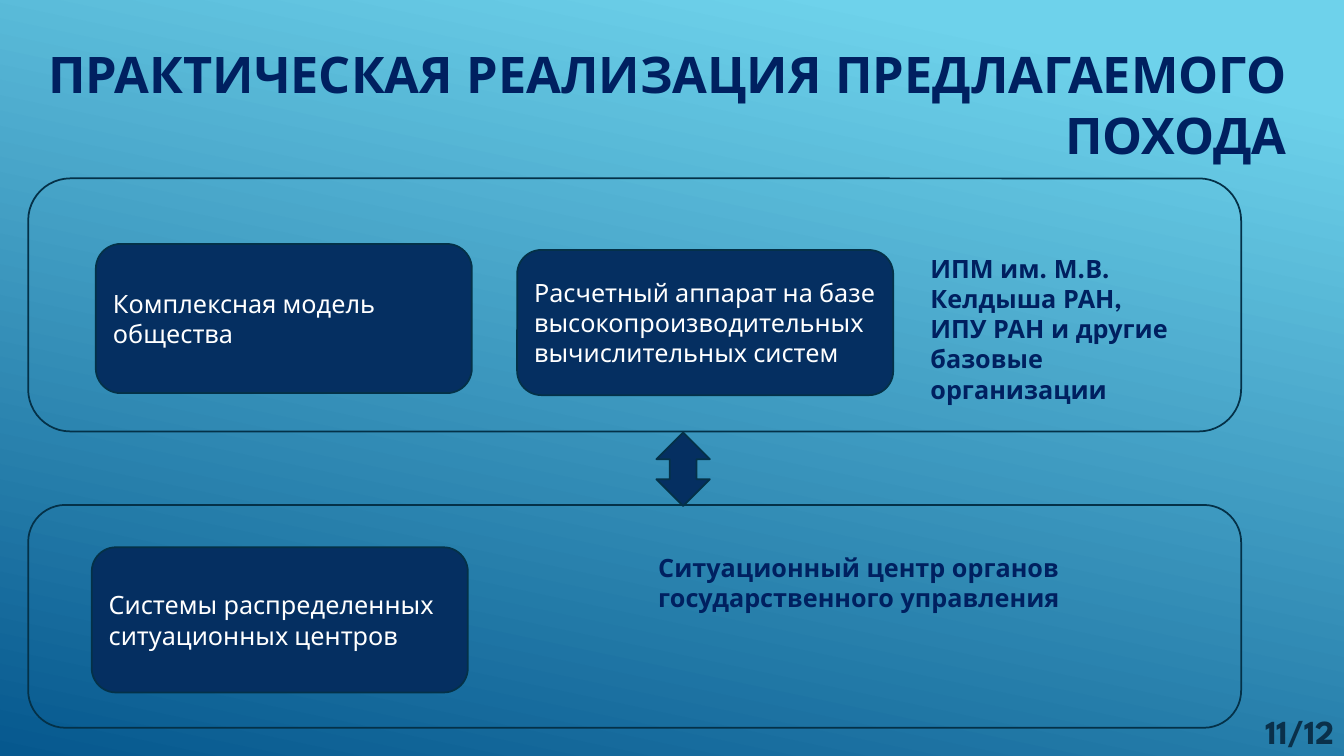
from typing import NamedTuple

from pptx import Presentation
from pptx.dml.color import RGBColor
from pptx.enum.shapes import MSO_SHAPE
from pptx.enum.text import MSO_ANCHOR, PP_ALIGN
from pptx.util import Inches, Pt

ROUNDED, TWO_WAY_ARROW = MSO_SHAPE.ROUNDED_RECTANGLE, MSO_SHAPE.UP_DOWN_ARROW
TOP, MIDDLE, BOTTOM = MSO_ANCHOR.TOP, MSO_ANCHOR.MIDDLE, MSO_ANCHOR.BOTTOM
LEFT, RIGHT = PP_ALIGN.LEFT, PP_ALIGN.RIGHT

SKY = RGBColor(0x6E, 0xD2, 0xEB)
OCEAN = RGBColor(0x06, 0x58, 0x8E)
NAVY = RGBColor(0x05, 0x2F, 0x61)
OUTLINE = RGBColor(0x04, 0x31, 0x48)
HEADING = RGBColor(0x00, 0x20, 0x60)
NUMBER = RGBColor(0x0A, 0x30, 0x4A)
WHITE = RGBColor(0xFF, 0xFF, 0xFF)

FONT = "League Spartan"
SLIDE_WIDTH, SLIDE_HEIGHT = Inches(13.333), Inches(7.5)


class Area(NamedTuple):
    """Left, top, width and height in percent of the slide."""
    left: float
    top: float
    width: float
    height: float

    def emu(self) -> tuple[int, int, int, int]:
        return (round(SLIDE_WIDTH * self.left / 100), round(SLIDE_HEIGHT * self.top / 100),
                round(SLIDE_WIDTH * self.width / 100), round(SLIDE_HEIGHT * self.height / 100))


class TextStyle(NamedTuple):
    size: int
    color: RGBColor
    bold: bool = True
    align: PP_ALIGN = LEFT
    anchor: MSO_ANCHOR = TOP


class Label(NamedTuple):
    area: Area
    paragraphs: list[str]
    style: TextStyle


TITLE_STYLE = TextStyle(36, HEADING, align=RIGHT, anchor=MIDDLE)
CARD_STYLE = TextStyle(18, WHITE, bold=False, anchor=MIDDLE)
OWNER_STYLE = TextStyle(18, HEADING)
NUMBER_STYLE = TextStyle(24, NUMBER, align=RIGHT, anchor=BOTTOM)

CARD_WIDTH = 27.98
CARDS = [
    Label(Area(7.13, 32.27, CARD_WIDTH, 19.73), ["Комплексная модель общества"], CARD_STYLE),
    Label(Area(38.48, 33.07, CARD_WIDTH, 19.2),
          ["Расчетный аппарат на базе высокопроизводительных вычислительных систем"], CARD_STYLE),
    Label(Area(6.83, 72.4, CARD_WIDTH, 19.2),
          ["Системы распределенных ситуационных центров"], CARD_STYLE),
]

PANELS = [Area(2.1, 23.6, 90.25, 33.47), Area(2.1, 66.8, 90.25, 29.47)]
EXCHANGE = Area(48.84, 57.2, 3.98, 9.73)

LABELS = [
    Label(Area(1.13, 4.8, 95.35, 17.87),
          ["ПРАКТИЧЕСКАЯ РЕАЛИЗАЦИЯ ПРЕДЛАГАЕМОГО ПОХОДА"], TITLE_STYLE),
    Label(Area(68.49, 32.8, 22.13, 21.6),
          ["ИПМ им. М.В. Келдыша РАН,", "ИПУ РАН и другие базовые организации"], OWNER_STYLE),
    Label(Area(48.24, 72.4, 46.59, 9.47),
          ["Ситуационный центр органов государственного управления"], OWNER_STYLE),
    Label(Area(90.62, 90.27, 9.38, 9.73), ["11/12"], NUMBER_STYLE),
]


def paint_background(slide) -> None:
    fill = slide.background.fill
    fill.gradient()
    fill.gradient_angle = 360 - 102
    for stop, color, position in zip(fill.gradient_stops, (SKY, OCEAN), (0.1, 1.0)):
        stop.color.rgb = color
        stop.position = position


def write(frame, label: Label) -> None:
    style = label.style
    frame.word_wrap = True
    frame.vertical_anchor = style.anchor
    frame.text = "\n".join(label.paragraphs)
    for paragraph in frame.paragraphs:
        paragraph.alignment = style.align
        font = paragraph.font
        font.name, font.size, font.bold = FONT, Pt(style.size), style.bold
        font.color.rgb = style.color


def add_outlined(slide, kind: MSO_SHAPE, area: Area, fill: RGBColor | None = None):
    shape = slide.shapes.add_shape(kind, *area.emu())
    shape.shadow.inherit = False
    shape.line.color.rgb = OUTLINE
    shape.line.width = Pt(1.25)
    if fill is None:
        shape.fill.background()
    else:
        shape.fill.solid()
        shape.fill.fore_color.rgb = fill
    return shape


def main() -> None:
    deck = Presentation()
    deck.slide_width, deck.slide_height = SLIDE_WIDTH, SLIDE_HEIGHT
    slide = deck.slides.add_slide(deck.slide_layouts[6])
    paint_background(slide)
    for card in CARDS:
        write(add_outlined(slide, ROUNDED, card.area, NAVY).text_frame, card)
    for panel in PANELS:
        add_outlined(slide, ROUNDED, panel)
    for label in LABELS:
        write(slide.shapes.add_textbox(*label.area.emu()).text_frame, label)
    add_outlined(slide, TWO_WAY_ARROW, EXCHANGE, NAVY)
    deck.save("out.pptx")


if __name__ == "__main__":
    main()
